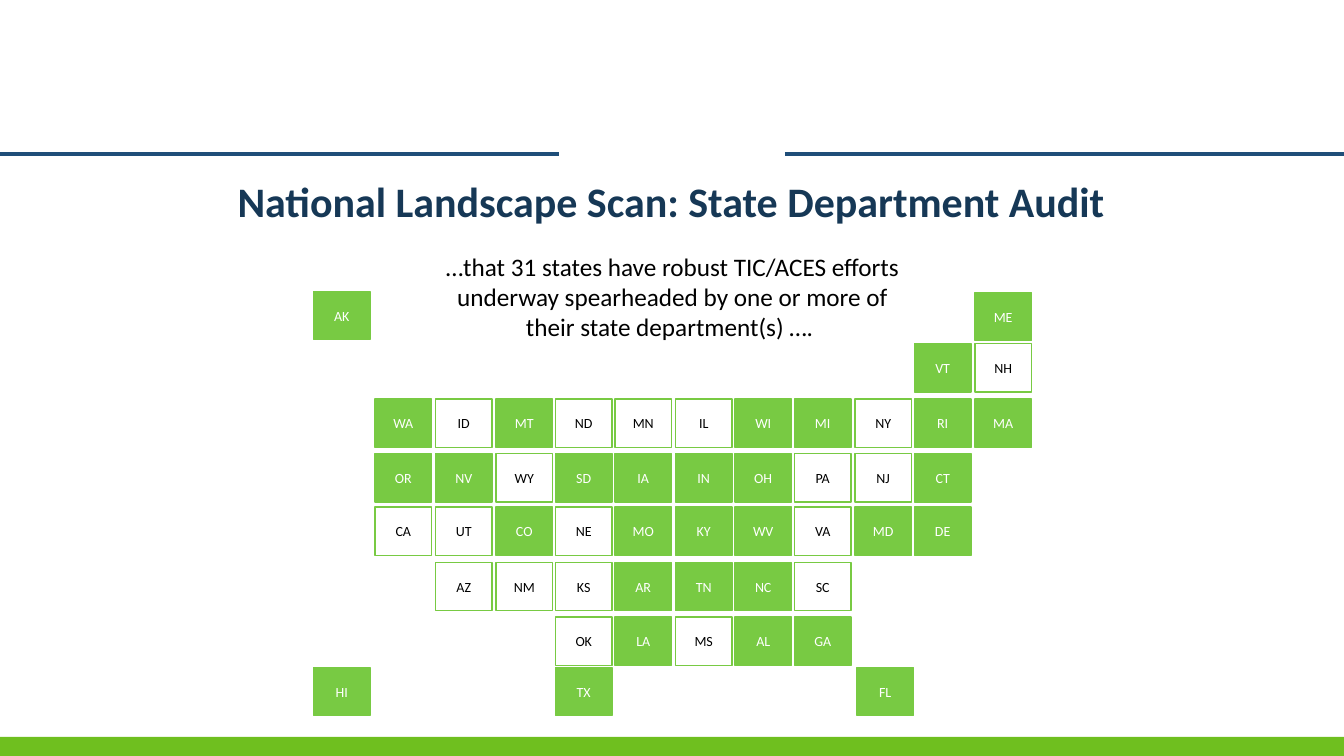
from dataclasses import dataclass

from lxml import etree
from pptx import Presentation
from pptx.dml.color import RGBColor
from pptx.enum.shapes import MSO_CONNECTOR, MSO_SHAPE
from pptx.enum.text import MSO_ANCHOR, MSO_AUTO_SIZE, PP_ALIGN
from pptx.oxml.ns import qn
from pptx.util import Inches, Pt

STRAIGHT = MSO_CONNECTOR.STRAIGHT
RECTANGLE = MSO_SHAPE.RECTANGLE
BOTTOM, MIDDLE, TOP = MSO_ANCHOR.BOTTOM, MSO_ANCHOR.MIDDLE, MSO_ANCHOR.TOP
CENTER = PP_ALIGN.CENTER
NO_AUTOFIT = MSO_AUTO_SIZE.NONE
TITLE_ONLY = 5


@dataclass(frozen=True)
class Theme:
    """Colours, font and type sizes of the slide."""
    font: str = "Calibri"
    rule: RGBColor = RGBColor(0x1F, 0x4E, 0x79)
    footer: RGBColor = RGBColor(0x6F, 0xBF, 0x1F)
    title: RGBColor = RGBColor(0x16, 0x38, 0x56)
    tile: RGBColor = RGBColor(0x78, 0xCA, 0x43)
    light: RGBColor = RGBColor(0xFF, 0xFF, 0xFF)
    dark: RGBColor = RGBColor(0, 0, 0)
    title_size: int = 30
    body_size: int = 18
    tile_size: int = 10
    rule_width: int = 3
    tile_line: int = 1


@dataclass(frozen=True)
class Box:
    """A rectangle in inches."""
    left: float
    top: float
    width: float
    height: float

    def lengths(self):
        """Return the four measures as slide lengths."""
        return [Inches(value) for value in (self.left, self.top, self.width, self.height)]


THEME = Theme()
SLIDE = Box(0, 0, 13.33, 7.5)
TILE_WIDTH, TILE_HEIGHT = 0.56, 0.48
COLUMN_OFFSETS = (0, 0.61, 1.21, 1.81, 2.4, 2.99, 3.59, 4.18, 4.77, 5.37, 5.96, 6.56)
ROW_OFFSETS = (0, 0.51, 1.06, 1.6, 2.13, 2.68, 3.22, 3.72)
STATE_SHIFTS = {"AK": (0, -0.01), "FL": (0.02, 0)}
STATE_ROWS = (
    "AK .  .  .  .  .  .  .  .  .  .  ME",
    ".  .  .  .  .  .  .  .  .  .  VT NH",
    ".  WA ID MT ND MN IL WI MI NY RI MA",
    ".  OR NV WY SD IA IN OH PA NJ CT .",
    ".  CA UT CO NE MO KY WV VA MD DE .",
    ".  .  AZ NM KS AR TN NC SC .  .  .",
    ".  .  .  .  OK LA MS AL GA .  .  .",
    "HI .  .  .  TX .  .  .  .  FL .  .",
)
OUTLINED_STATES = set("NH ID ND MN IL NY WY PA NJ CA UT NE VA AZ NM KS SC OK MS".split())


def write_text(shape, text, size, color, anchor, bold=False):
    """Put one centred run into a shape and return its paragraph."""
    frame = shape.text_frame
    frame.word_wrap = True
    frame.auto_size = NO_AUTOFIT
    frame.vertical_anchor = anchor
    paragraph = frame.paragraphs[0]
    paragraph.alignment = CENTER
    run = paragraph.add_run()
    run.text = text
    run.font.name = THEME.font
    run.font.size = Pt(size)
    run.font.bold = bold
    run.font.color.rgb = color
    return paragraph


def add_header_rules(slide, box):
    """Draw two rules that leave a centred gap in the box."""
    length = box.width * 0.416
    for start in (box.left, box.left + box.width - length):
        rule = slide.shapes.add_connector(
            STRAIGHT, Inches(start), Inches(box.top), Inches(start + length), Inches(box.top))
        rule.line.color.rgb = THEME.rule
        rule.line.width = Pt(THEME.rule_width)
        etree.SubElement(rule.element.spPr, qn("a:effectLst"))


def add_footer_bar(slide, box):
    """Fill the box with the footer colour."""
    bar = slide.shapes.add_shape(RECTANGLE, *box.lengths())
    bar.shadow.inherit = False
    bar.fill.solid()
    bar.fill.fore_color.rgb = THEME.footer
    bar.line.fill.background()


def add_title(slide, box, text):
    """Place and format the title placeholder."""
    title = slide.shapes.title
    title.left, title.top, title.width, title.height = box.lengths()
    paragraph = write_text(title, text, THEME.title_size, THEME.title, BOTTOM, bold=True)
    paragraph.line_spacing = 0.9


def add_state_tile(slide, box, state):
    """Add one state, filled when its efforts are robust."""
    tile = slide.shapes.add_shape(RECTANGLE, *box.lengths())
    tile.shadow.inherit = False
    tile.line.color.rgb = THEME.tile
    tile.line.width = Pt(THEME.tile_line)
    if state in OUTLINED_STATES:
        tile.fill.background()
        color = THEME.dark
    else:
        tile.fill.solid()
        tile.fill.fore_color.rgb = THEME.tile
        color = THEME.light
    write_text(tile, state, THEME.tile_size, color, MIDDLE)


def add_state_map(slide, left, top):
    """Lay the states out as a tile map from its top left corner."""
    for row_offset, row in zip(ROW_OFFSETS, STATE_ROWS):
        for column_offset, state in zip(COLUMN_OFFSETS, row.split()):
            if state != ".":
                across, down = STATE_SHIFTS.get(state, (0, 0))
                tile_box = Box(left + column_offset + across, top + row_offset + down,
                               TILE_WIDTH, TILE_HEIGHT)
                add_state_tile(slide, tile_box, state)


def add_statement(slide, box, text):
    """Add the centred statement above the map."""
    statement = slide.shapes.add_textbox(*box.lengths())
    write_text(statement, text, THEME.body_size, THEME.dark, TOP)


def build_slide(presentation):
    """Assemble the audit slide."""
    slide = presentation.slides.add_slide(presentation.slide_layouts[TITLE_ONLY])
    add_header_rules(slide, Box(0, 1.53, SLIDE.width, 0))
    add_footer_bar(slide, Box(0, 7.31, SLIDE.width, 0.19))
    add_title(slide, Box(1.1, 1.51, 11.12, 0.79),
              "National Landscape Scan: State Department Audit")
    add_state_map(slide, 3.11, 2.9)
    add_statement(slide, Box(4.31, 2.44, 4.72, 1.01),
                  "…that 31 states have robust TIC/ACES efforts underway spearheaded "
                  "by one or more of their state department(s) …. ")


def main():
    """Build and save the presentation."""
    presentation = Presentation()
    presentation.slide_width = Inches(SLIDE.width)
    presentation.slide_height = Inches(SLIDE.height)
    build_slide(presentation)
    presentation.save("out.pptx")


if __name__ == "__main__":
    main()
